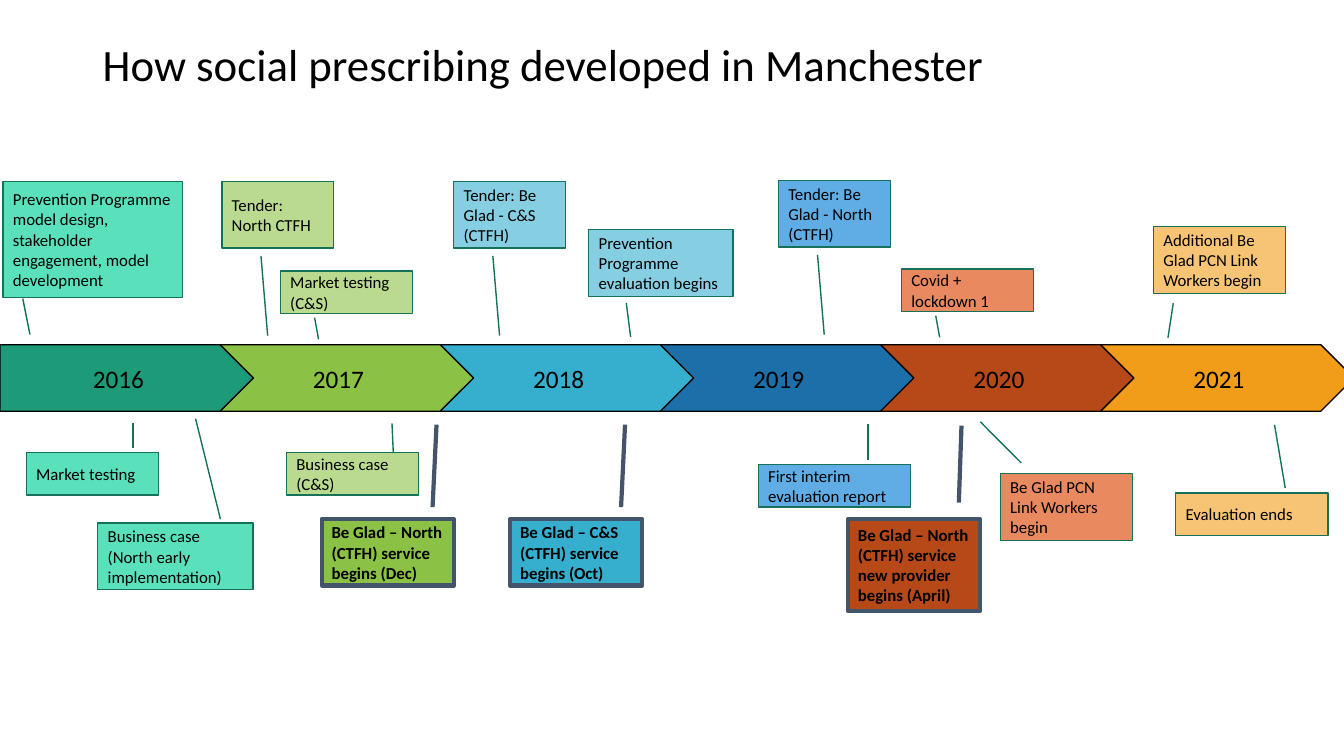
from pptx import Presentation
from pptx.dml.color import RGBColor
from pptx.enum.shapes import MSO_SHAPE
from pptx.enum.text import MSO_ANCHOR, PP_ALIGN
from pptx.util import Inches, Pt

INK = "000000"
GREEN_EDGE = "157259"
SERVICE_EDGE = "44546A"
MINT, LIME, SKY, BLUE, CORAL, SAND = (
    "5AE0BB", "B9DA8F", "86CFE2", "5FADE4", "E98960", "F7C475")

YEARS = [("2016", "1D9A78"), ("2017", "8BC145"), ("2018", "36AFCE"),
         ("2019", "1D6FA9"), ("2020", "B74919"), ("2021", "F19D19")]
YEAR_COLOR = dict(YEARS)

TENDER_LEADER = (1.12, 0.35, 2.32, 0.41)
SHORT_LEADER = (1.1, 0.26, 1.61, 0.29)
SERVICE_LEADER = (-0.18, 0.84, -1.42, 0.87)

MILESTONES = [
    ("Prevention Programme model design, stakeholder engagement, model development",
     (0.03, 1.8, 1.78, 1.15), MINT, (1.01, 0.11, 1.32, 0.15)),
    ("Business case (North early implementation)",
     (0.97, 5.19, 1.54, 0.66), MINT, (-0.06, 0.79, -1.57, 0.63)),
    ("Market testing", (0.26, 4.49, 1.31, 0.42), MINT, (-0.11, 0.81, -0.71, 0.81)),
    ("Tender: North CTFH", (2.2, 1.8, 1.11, 0.66), LIME, TENDER_LEADER),
    ("Market testing (C&S)", (2.78, 2.69, 1.31, 0.42), LIME, SHORT_LEADER),
    ("Business case (C&S)", (2.84, 4.49, 1.31, 0.42), LIME, (0.01, 0.81, -0.69, 0.8)),
    ("Tender: Be Glad - C&S (CTFH)", (4.5, 1.8, 1.11, 0.66), SKY, TENDER_LEADER),
    ("Tender: Be Glad - North (CTFH)", (7.72, 1.79, 1.11, 0.66), BLUE, TENDER_LEADER),
    ("Covid + lockdown 1", (8.94, 2.67, 1.31, 0.42), CORAL, SHORT_LEADER),
    ("Be Glad PCN Link Workers begin",
     (9.92, 4.7, 1.31, 0.66), CORAL, (-0.16, 0.16, -0.78, -0.15)),
    ("Additional Be Glad PCN Link Workers begin",
     (11.44, 2.25, 1.31, 0.66), SAND, (1.15, 0.15, 1.67, 0.11)),
    ("Prevention Programme evaluation begins",
     (5.84, 2.28, 1.43, 0.66), SKY, SHORT_LEADER),
    ("First interim evaluation report",
     (7.52, 4.61, 1.51, 0.42), BLUE, (-0.12, 0.72, -0.96, 0.72)),
    ("Evaluation ends", (11.66, 4.89, 1.51, 0.42), SAND, (-0.12, 0.72, -1.61, 0.65)),
]

SERVICE_STARTS = [
    ("Be Glad – North (CTFH) service begins (Dec)",
     (3.19, 5.15, 1.31, 0.66), YEAR_COLOR["2017"], SERVICE_LEADER),
    ("Be Glad – C&S (CTFH) service begins (Oct)",
     (5.06, 5.15, 1.31, 0.66), YEAR_COLOR["2018"], SERVICE_LEADER),
    ("Be Glad – North (CTFH) service new provider begins (April)",
     (8.41, 5.15, 1.31, 0.91), YEAR_COLOR["2020"], (-0.18, 0.84, -1.02, 0.86)),
]


def color(value):
    return RGBColor.from_string(value)


def write(holder, text, size, align=PP_ALIGN.LEFT, bold=False):
    frame = holder.text_frame
    frame.word_wrap = True
    frame.vertical_anchor = MSO_ANCHOR.MIDDLE
    paragraph = frame.paragraphs[0]
    paragraph.alignment = align
    run = paragraph.add_run()
    run.text = text
    run.font.name = "Calibri"
    run.font.size = Pt(size)
    run.font.bold = bold
    run.font.color.rgb = color(INK)
    return paragraph


def add_filled(slide, kind, box, fill, edge, edge_width):
    shape = slide.shapes.add_shape(kind, *map(Inches, box))
    shape.shadow.inherit = False
    shape.fill.solid()
    shape.fill.fore_color.rgb = color(fill)
    shape.line.color.rgb = color(edge)
    shape.line.width = Pt(edge_width)
    return shape


def add_heading(slide, box):
    heading = slide.shapes.add_textbox(*map(Inches, box))
    paragraph = write(heading, "How social prescribing developed in Manchester", 32)
    paragraph.line_spacing = 0.9


def add_year_band(slide, box):
    left, top, width, height = box
    overlap = height / 2
    step = (width - overlap) / len(YEARS)
    for index, (year, fill) in reversed(list(enumerate(YEARS))):
        arrow = add_filled(slide, MSO_SHAPE.PENTAGON,
                           (left + index * step, top, step + overlap, height),
                           fill, INK, 1)
        write(arrow, year, 18, PP_ALIGN.CENTER)


def add_milestone(slide, text, box, fill, leader, service=False):
    edge, edge_width = (SERVICE_EDGE, 3) if service else (GREEN_EDGE, 1)
    callout = add_filled(slide, MSO_SHAPE.LINE_CALLOUT_1, box, fill, edge, edge_width)
    for index, value in enumerate(leader):
        callout.adjustments[index] = value
    write(callout, text, 12, bold=service)


def main():
    deck = Presentation()
    deck.slide_width, deck.slide_height = Inches(13.33), Inches(7.5)
    slide = deck.slides.add_slide(deck.slide_layouts[6])
    add_heading(slide, (0.92, 0.29, 11.5, 0.74))
    add_year_band(slide, (0, 3.42, 13.43, 0.66))
    for milestone in MILESTONES:
        add_milestone(slide, *milestone)
    for start in SERVICE_STARTS:
        add_milestone(slide, *start, service=True)
    deck.save("out.pptx")


if __name__ == "__main__":
    main()
